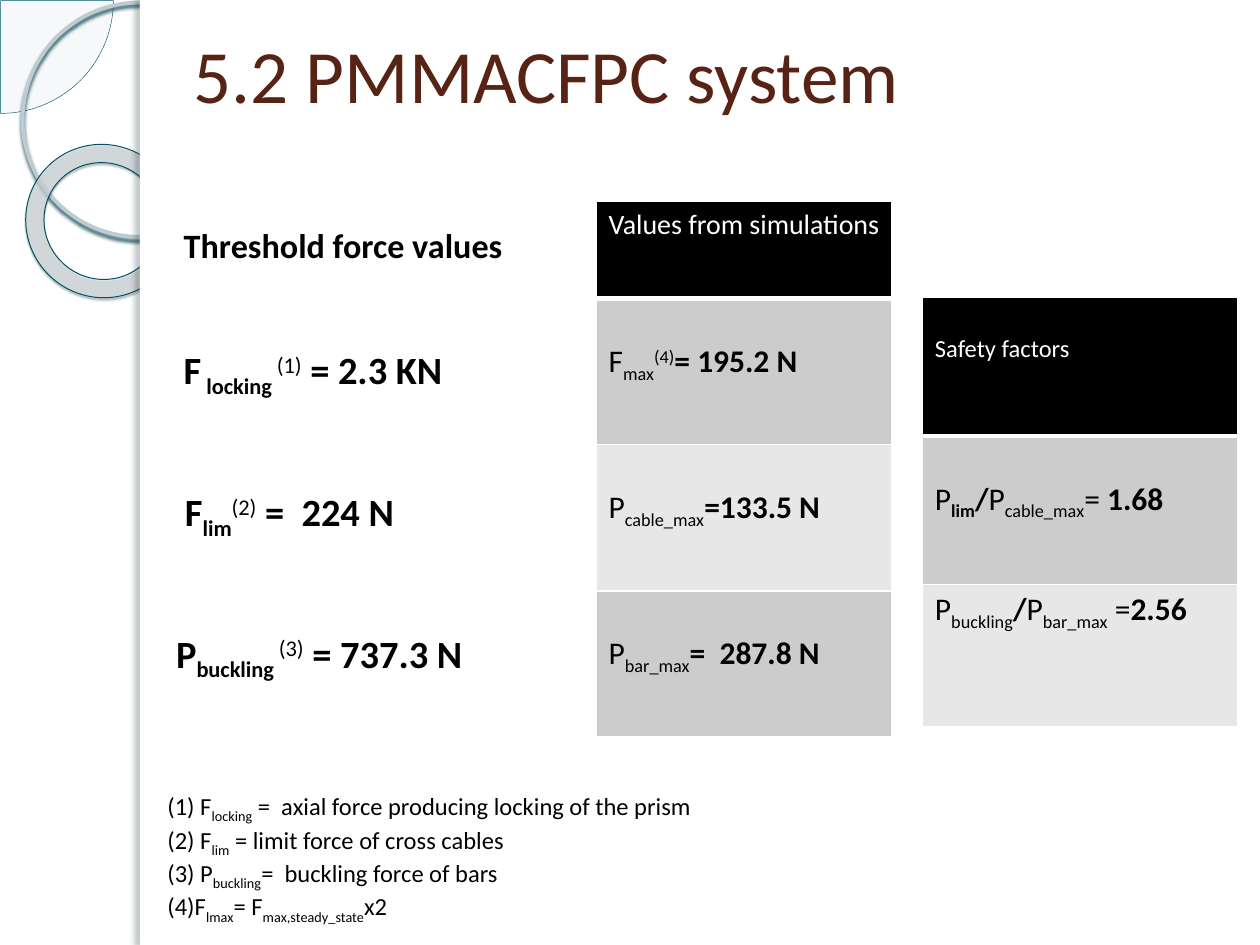
"""Build the slide on force values of the PMMACFPC system."""
import lxml.etree
import pptx
import pptx.dml.color
import pptx.enum.shapes
import pptx.enum.text
import pptx.oxml.ns
import pptx.util

Inches = pptx.util.Inches
Pt = pptx.util.Pt
RGB = pptx.dml.color.RGBColor
KIND = pptx.enum.shapes.MSO_SHAPE
MID = pptx.enum.text.MSO_ANCHOR.MIDDLE
qn = pptx.oxml.ns.qn

BLACK = RGB(0x00, 0x00, 0x00)
WHITE = RGB(0xFF, 0xFF, 0xFF)
BROWN = RGB(0x57, 0x23, 0x14)
DARK = RGB(0xCC, 0xCC, 0xCC)
LIGHT = RGB(0xE7, 0xE7, 0xE7)
PALE = RGB(0xE9, 0xEC, 0xED)
RING = RGB(0xBE, 0xCC, 0xD2)
DONUT = RGB(0xD9, 0xDD, 0xDF)
TEAL = RGB(0x00, 0x55, 0x69)
DEEP = RGB(0x00, 0x50, 0x63)
RING_SHADE = RGB(0x0B, 0x43, 0x50)
DONUT_SHADE = RGB(0x00, 0x25, 0x2D)
EDGE_SHADE = RGB(0x0D, 0x29, 0x30)
FONT = "Calibri"
SUB, SUP = -25, 30


def node(up, tag, **attrs):
    """Add an XML child with attributes."""
    item = lxml.etree.SubElement(up, qn(tag))
    for name, value in attrs.items():
        item.set(name, str(value))
    return item


def add_runs(para, runs, size, color):
    """Add runs given as (text, bold, baseline shift)."""
    for text, bold, base in runs:
        run = para.add_run()
        run.text = text
        font = run.font
        font.name, font.size, font.bold = FONT, Pt(size), bold
        font.color.rgb = color
        if base:
            run._r.get_or_add_rPr().set("baseline", str(base * 1000))


def add_text(slide, box, lines, size, color=BLACK, anchor=None):
    """Add a text box with one paragraph per line."""
    frame = slide.shapes.add_textbox(*map(Inches, box)).text_frame
    frame.word_wrap = True
    if anchor is not None:
        frame.vertical_anchor = anchor
    for i, runs in enumerate(lines):
        para = frame.add_paragraph() if i else frame.paragraphs[0]
        add_runs(para, runs, size, color)


def add_shade(shape, color, alpha, blur, dist, angle):
    """Give a shape an outer shadow."""
    effect = shape._element.spPr.find(qn("a:effectLst"))
    outer = node(effect, "a:outerShdw", blurRad=Pt(blur), dist=Pt(dist),
                 dir=angle * 60000, algn="ctr", rotWithShape=0)
    tint = node(outer, "a:srgbClr", val=color)
    node(tint, "a:alpha", val=alpha * 1000)


def add_form(slide, kind, box, fill=None, alpha=100, line=None, width=0,
             shade=None):
    """Add a preset shape with fill, line and shadow."""
    shape = slide.shapes.add_shape(kind, *map(Inches, box))
    shape.shadow.inherit = False
    if fill is None:
        shape.fill.background()
    else:
        shape.fill.solid()
        shape.fill.fore_color.rgb = fill
        if alpha < 100:
            tint = shape._element.spPr.find(".//" + qn("a:srgbClr"))
            node(tint, "a:alpha", val=alpha * 1000)
    if line is None:
        shape.line.fill.background()
    else:
        shape.line.color.rgb = line
        shape.line.width = Pt(width)
    if shade:
        add_shade(shape, *shade)
    return shape


def add_rules(cell, foot):
    """Draw white cell borders, with a given width at the foot."""
    props = cell._tc.get_or_add_tcPr()
    for side, width in zip("LRTB", (1, 1, 1, foot)):
        rule = node(props, "a:ln" + side, w=Pt(width))
        node(node(rule, "a:solidFill"), "a:srgbClr", val=WHITE)


def add_grid(slide, box, rows):
    """Add a one-column table of (height, top margin, size, runs)."""
    table = slide.shapes.add_table(len(rows), 1, *map(Inches, box)).table
    for i, (height, top, size, runs) in enumerate(rows):
        table.rows[i].height = Inches(height)
        cell = table.cell(i, 0)
        cell.margin_top = Inches(top)
        add_rules(cell, 1 if i else 3)
        cell.fill.solid()
        cell.fill.fore_color.rgb = (DARK if i % 2 else LIGHT) if i else BLACK
        add_runs(cell.text_frame.paragraphs[0], runs, size,
                 BLACK if i else WHITE)


def add_decor(slide):
    """Draw the rings and the side band."""
    pie = add_form(slide, KIND.PIE, (-0.89, -0.89, 1.79, 1.79), PALE, 33,
                   TEAL, 0.25)
    pie.adjustments[0], pie.adjustments[1] = 0, 54
    add_form(slide, KIND.OVAL, (0.18, 0.02, 1.86, 1.86), line=RING,
             width=2.15, shade=(RING_SHADE, 85, 2, 2, 90))
    donut = add_form(slide, KIND.DONUT, (0.2, 1.15, 1.23, 1.21), DONUT, 70,
                     DEEP, 0.58, (DONUT_SHADE, 35, 1, 1.2, 75))
    donut.adjustments[0] = 0.12
    donut.rotation = 38.6
    add_form(slide, KIND.RECTANGLE, (1.11, 0, 8.89, 7.5), WHITE)
    add_form(slide, KIND.RECTANGLE, (1.11, 0, 0.08, 7.5), WHITE,
             shade=(EDGE_SHADE, 25, 3, 3, 180))


def main():
    """Build and save the slide."""
    deck = pptx.Presentation()
    deck.slide_width, deck.slide_height = Inches(10), Inches(7.5)
    slide = deck.slides.add_slide(deck.slide_layouts[6])
    add_decor(slide)
    add_text(slide, (1.44, 0.07, 8.14, 1.02),
             [[("5.2 PMMACFPC system", False, 0)]], 43, BROWN, MID)
    add_text(slide, (1.36, 1.36, 3.08, 1.17),
             [[("Threshold force values", True, 0)]], 19.5, anchor=MID)

    forces = [
        (1.36, "F", " locking ", "(1)", " = 2.3 KN"),
        (1.37, "F", "lim", "(2)", " =  224 N"),
        (1.3, "P", "buckling", " (3)", " = 737.3 N"),
    ]
    for i, (left, name, sub, mark, value) in enumerate(forces):
        runs = [(name, True, 0), (sub, True, SUB), (mark, False, SUP),
                (value, True, 0)]
        add_text(slide, (left, 2.7 + 1.125 * i, 3.27, 0.47), [runs], 22)

    add_grid(slide, (4.73, 1.6, 2.35, 4.25), [
        (0.77, 0.05, 16, [("Values from simulations", False, 0)]),
        (1.16, 0.35, 18, [("F", False, 0), ("max", False, SUB),
                          ("(4)", False, SUP), ("= 195.2 N", True, 0)]),
        (1.16, 0.35, 18, [("P", False, 0), ("cable_max", False, SUB),
                          ("=133.5 N", True, 0)]),
        (1.16, 0.35, 18, [("P", False, 0), ("bar_max", False, SUB),
                          ("=  287.8 N", True, 0)]),
    ])
    add_grid(slide, (7.32, 2.36, 2.5, 3.41), [
        (1.1, 0.29, 14, [("Safety factors", False, 0)]),
        (1.18, 0.35, 18, [("P", False, 0), ("lim", True, SUB),
                          ("/", True, 0), ("P", False, 0),
                          ("cable_max", False, SUB), ("= ", False, 0),
                          ("1.68", True, 0)]),
        (1.13, 0.05, 18, [("P", False, 0), ("buckling", False, SUB),
                          ("/", True, 0), ("P", False, 0),
                          ("bar_max", False, SUB), (" =", False, 0),
                          ("2.56", True, 0)]),
    ])

    notes = [
        ("(1) F", "locking", " =  axial force producing locking of the prism"),
        ("(2) F", "lim", " = limit force of cross cables"),
        ("(3) P", "buckling", "=  buckling force of bars"),
        ("(4)F", "lmax", "= F", "max,steady_state", "x2"),
    ]
    lines = [[(text, False, SUB if i % 2 else 0)
              for i, text in enumerate(note)] for note in notes]
    add_text(slide, (1.23, 6.23, 4.52, 1.04), lines, 14)
    deck.save("out.pptx")


if __name__ == "__main__":
    main()
